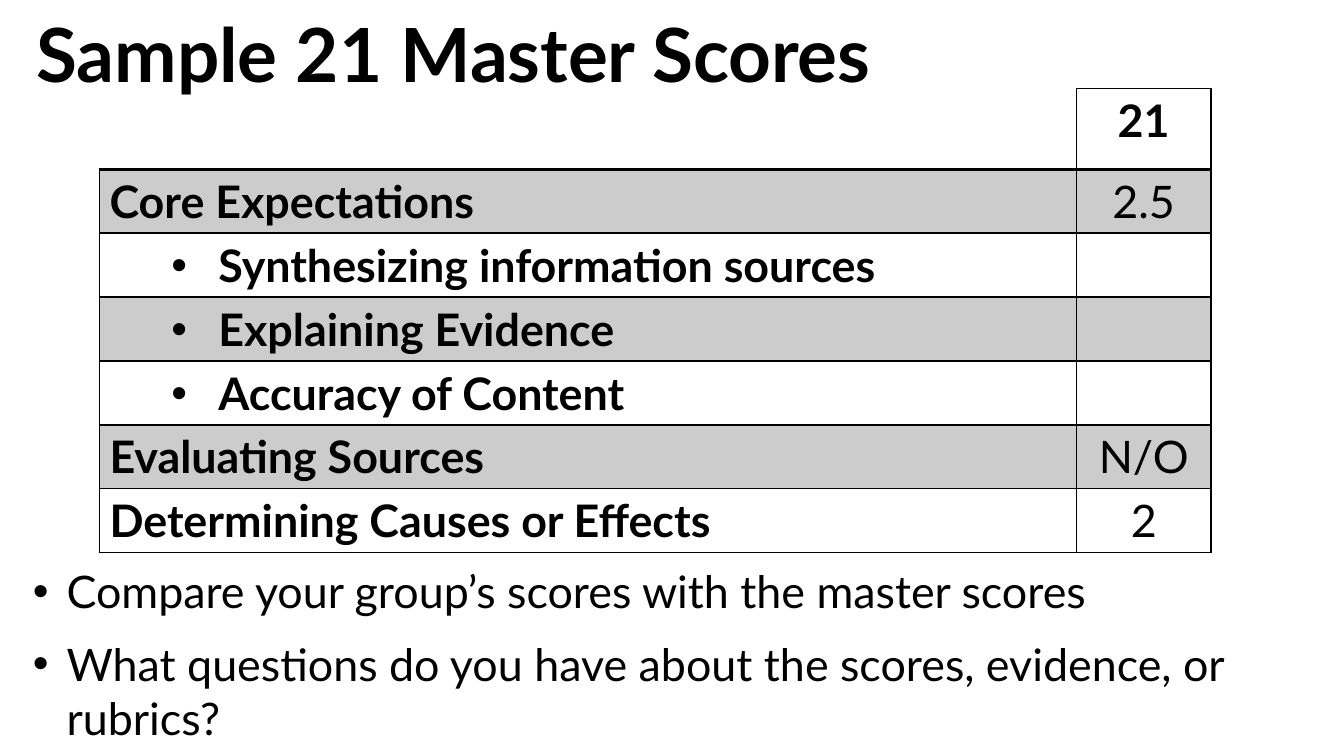
import pptx
import pptx.util
import pptx.dml.color
import pptx.enum.text
import pptx.oxml
import pptx.oxml.ns
from lxml import etree

Inches, Pt = pptx.util.Inches, pptx.util.Pt
ALIGN = pptx.enum.text.PP_ALIGN
ANCHOR = pptx.enum.text.MSO_ANCHOR
BLACK = pptx.dml.color.RGBColor(0, 0, 0)
FONT, BULLET_FONT = "Lato", "Arial"

# Content
TITLE = "Sample 21 Master Scores"
SAMPLE = "21"
SCORES = [  # criterion, score, is a sub-criterion
    ("Core Expectations", "2.5", False),
    ("Synthesizing information sources", "", True),
    ("Explaining Evidence", "", True),
    ("Accuracy of Content", "", True),
    ("Evaluating Sources", "N/O", False),
    ("Determining Causes or Effects", "2", False),
]
PROMPTS = [
    "Compare your group’s scores with the master scores",
    "What questions do you have about the scores, evidence, or rubrics?",
]
COLUMN_WIDTHS = [7.27, 1]
HEADER_HEIGHT, ROW_HEIGHT = 0.6, 0.47


def sub(parent, tag, **attributes):
    return etree.SubElement(parent, pptx.oxml.ns.qn(tag), attributes)


def style(paragraph, size=24, bold=False):
    paragraph.font.name = FONT
    paragraph.font.size = Pt(size)
    paragraph.font.bold = bold
    paragraph.font.color.rgb = BLACK


def add_bullet(paragraph, left, hanging):
    properties = paragraph._p.get_or_add_pPr()
    properties.set("marL", str(Inches(left)))
    properties.set("indent", str(-Inches(hanging)))
    font = sub(properties, "a:buFont", typeface=BULLET_FONT)
    bullet = sub(properties, "a:buChar", char="•")
    defaults = properties.find(pptx.oxml.ns.qn("a:defRPr"))
    if defaults is not None:
        defaults.addprevious(font)
        defaults.addprevious(bullet)


def set_margins(box):
    box.margin_left = box.margin_right = Pt(5.4)
    box.margin_top = box.margin_bottom = Pt(2.7)


def set_borders(cell, left=1, right=1, top=1, bottom=1):
    properties = cell._tc.get_or_add_tcPr()
    sides = {"L": left, "R": right, "T": top, "B": bottom}
    for position, (side, width) in enumerate(sides.items()):
        line = sub(properties, f"a:ln{side}", w=str(Pt(width)))
        if width:
            sub(sub(line, "a:solidFill"), "a:srgbClr", val=str(BLACK))
        else:
            sub(line, "a:noFill")
        properties.insert(position, line)


def fill_cell(cell, text, bold, shaded):
    set_margins(cell)
    cell.text = text
    style(cell.text_frame.paragraphs[0], bold=bold)
    if shaded:
        cell.fill.solid()
        cell.fill.fore_color.rgb = BLACK
        color = cell._tc.tcPr.find(".//" + pptx.oxml.ns.qn("a:srgbClr"))
        sub(color, "a:alpha", val="20000")
    else:
        cell.fill.background()


# Widescreen slide, 16 to 9
presentation = pptx.Presentation()
presentation.slide_width = Inches(10)
presentation.slide_height = Inches(10) * 9 // 16
slide = presentation.slides.add_slide(presentation.slide_layouts[5])

# Title
title = slide.shapes.title
title.left, title.top = Inches(0.17), Inches(-0.15)
title.width, title.height = Inches(8.62), Inches(1.09)
title.text_frame.text = TITLE
title.text_frame.vertical_anchor = ANCHOR.MIDDLE
title.text_frame.paragraphs[0].alignment = ALIGN.LEFT
style(title.text_frame.paragraphs[0], size=40, bold=True)

# Score table
rows = [("", SAMPLE, False)] + SCORES
table = slide.shapes.add_table(
    len(rows), len(COLUMN_WIDTHS), Inches(0.74), Inches(0.66),
    Inches(sum(COLUMN_WIDTHS)),
    Inches(HEADER_HEIGHT + ROW_HEIGHT * len(SCORES))).table
table.first_row = table.horz_banding = False
for column, width in zip(table.columns, COLUMN_WIDTHS):
    column.width = Inches(width)

for index, (criterion, score, is_sub) in enumerate(rows):
    header = index == 0
    shaded = index % 2 == 1
    table.rows[index].height = Inches(HEADER_HEIGHT if header else ROW_HEIGHT)
    criterion_cell, score_cell = table.cell(index, 0), table.cell(index, 1)
    fill_cell(criterion_cell, criterion, True, shaded)
    fill_cell(score_cell, score, header, shaded)
    score_cell.text_frame.paragraphs[0].alignment = ALIGN.CENTER
    if is_sub:
        criterion_paragraph = criterion_cell.text_frame.paragraphs[0]
        criterion_paragraph.level = 1
        add_bullet(criterion_paragraph, 0.81, 0.35)
    top = 2 if index == 1 else 1
    bottom = 2 if header else 1
    outer = 0 if header else 1
    set_borders(criterion_cell, left=outer, top=outer and top, bottom=bottom)
    set_borders(score_cell, top=top, bottom=bottom)

# Discussion prompts
prompts = slide.shapes.add_textbox(
    Inches(0.17), Inches(4.16), Inches(9.43), Inches(1.15)).text_frame
prompts.word_wrap = True
set_margins(prompts)
for index, prompt in enumerate(PROMPTS):
    paragraph = prompts.add_paragraph() if index else prompts.paragraphs[0]
    paragraph.text = prompt
    paragraph.space_before = Pt(10 if index else 0)
    style(paragraph)
    add_bullet(paragraph, 0.25, 0.25)

presentation.save("out.pptx")
